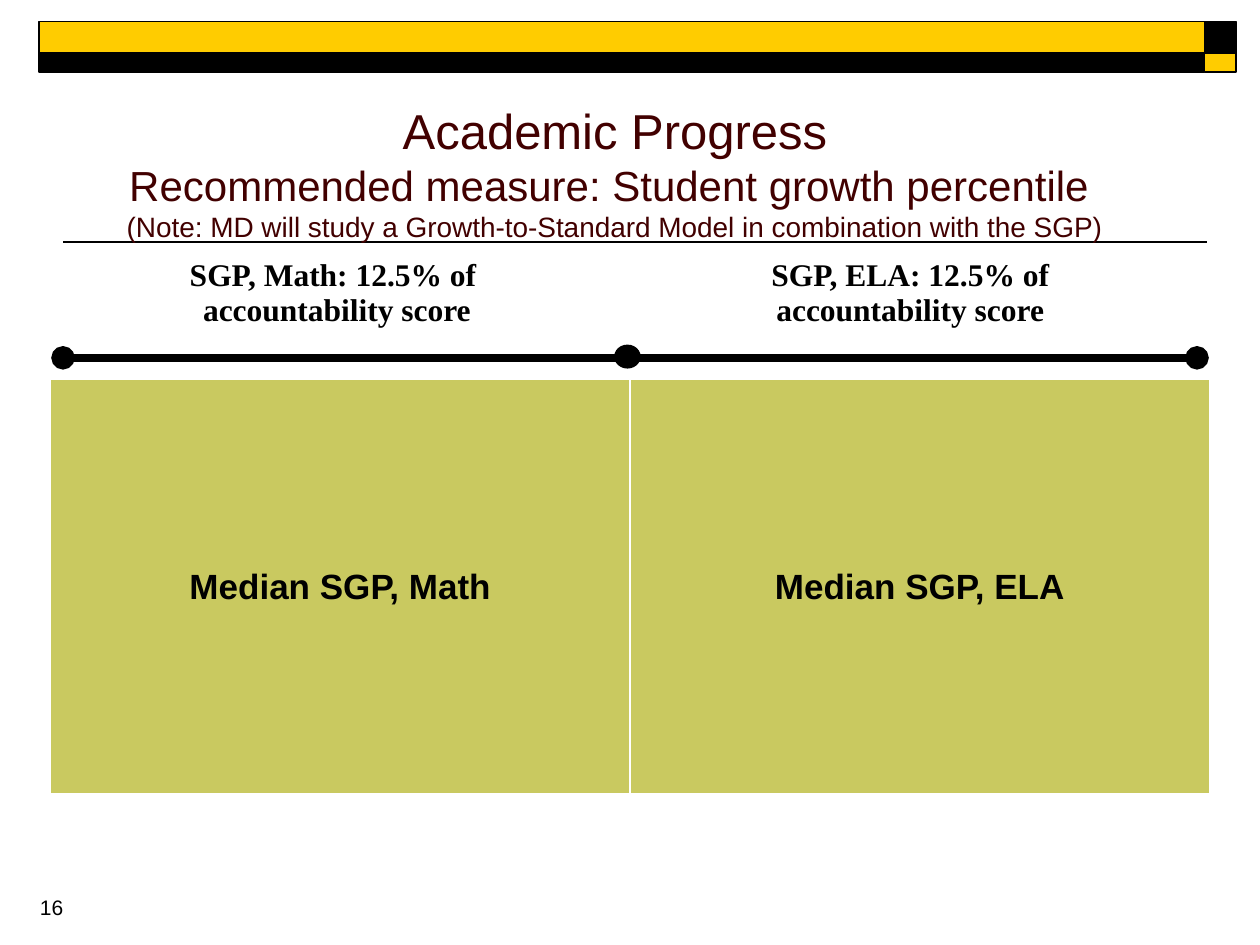
from lxml import etree
from pptx import Presentation
from pptx import util as u
from pptx.dml.color import RGBColor
from pptx.enum import shapes, text
from pptx.oxml import ns

BLACK = RGBColor(0x00, 0x00, 0x00)
GOLD = RGBColor(0xFF, 0xCC, 0x00)
OLIVE = RGBColor(0xC9, 0xC9, 0x60)
MAROON = RGBColor(0x42, 0x00, 0x00)
WHITE = RGBColor(0xFF, 0xFF, 0xFF)


class SlideBuilder:
    font = "Arial"
    borders = {"lnL": 1, "lnR": 1, "lnT": 1, "lnB": 3}

    def __init__(self, s):
        self.s = s

    def box(self, *at):
        return [u.Inches(v) for v in at]

    def style(self, tf, sizes, color, font=None, bold=False):
        runs = [r for p in tf.paragraphs for r in p.runs]
        for p in tf.paragraphs:
            p.alignment = text.PP_ALIGN.CENTER
        for r, size in zip(runs, sizes):
            r.font.name = font or self.font
            r.font.size = u.Pt(size)
            r.font.bold = bold
            r.font.color.rgb = color

    def shape(self, kind, at, fill, width=1):
        sp = self.s.shapes.add_shape(kind, *self.box(*at))
        sp.shadow.inherit = False
        sp.fill.solid()
        sp.fill.fore_color.rgb = fill
        sp.line.color.rgb = BLACK
        sp.line.width = u.Pt(width)

    def line(self, x1, x2, y, width, ends=None):
        c = self.s.shapes.add_connector(
            shapes.MSO_CONNECTOR.STRAIGHT, *self.box(x1, y, x2, y))
        c.line.color.rgb = BLACK
        c.line.width = u.Pt(width)
        spPr = c._element.spPr
        if ends:
            ln = spPr.find(ns.qn("a:ln"))
            for tag in ("a:headEnd", "a:tailEnd"):
                etree.SubElement(ln, ns.qn(tag), type=ends)
        etree.SubElement(spPr, ns.qn("a:effectLst"))

    def text_box(self, at, content, sizes, color, anchor=text.MSO_ANCHOR.TOP):
        tf = self.s.shapes.add_textbox(*self.box(*at)).text_frame
        tf.word_wrap = True
        tf.vertical_anchor = anchor
        tf.text = content
        self.style(tf, sizes, color)

    def border(self, cell):
        tcPr = cell._tc.get_or_add_tcPr()
        for tag, width in self.borders.items():
            ln = etree.SubElement(tcPr, ns.qn("a:" + tag), w=str(u.Pt(width)))
            fill = etree.SubElement(ln, ns.qn("a:solidFill"))
            etree.SubElement(fill, ns.qn("a:srgbClr"), val=str(WHITE))

    def table(self, at, labels, size, font=None, fill=None,
              anchor=text.MSO_ANCHOR.TOP):
        table = self.s.shapes.add_table(1, len(labels), *self.box(*at)).table
        table.first_row = table.horz_banding = False
        for cell, label in zip(table.rows[0].cells, labels):
            self.border(cell)
            if fill is None:
                cell.fill.background()
            else:
                cell.fill.solid()
                cell.fill.fore_color.rgb = fill
            cell.vertical_anchor = anchor
            cell.text_frame.text = label
            self.style(cell.text_frame, [size] * 2, BLACK, font, bold=True)


def main():
    prs = Presentation()
    prs.slide_width, prs.slide_height = u.Inches(10), u.Inches(7.5)
    b = SlideBuilder(prs.slides.add_slide(prs.slide_layouts[6]))
    rect, oval = shapes.MSO_SHAPE.RECTANGLE, shapes.MSO_SHAPE.OVAL

    b.line(0.5, 9.58, 1.92, 1)
    for y, h, bar, corner in ((0.17, 0.25, GOLD, BLACK),
                              (0.42, 0.15, BLACK, GOLD)):
        b.shape(rect, (0.31, y, 9.25, h), bar)
        b.shape(rect, (9.56, y, 0.25, h), corner)

    b.table((0.4, 3.01, 9.2, 3.3), ("Median SGP, Math", "Median SGP, ELA"),
            20, fill=OLIVE, anchor=text.MSO_ANCHOR.MIDDLE)
    b.line(0.5, 9.5, 2.84, 4.5, ends="oval")
    b.shape(oval, (4.88, 2.74, 0.2, 0.18), BLACK, 0.75)
    b.table((0.4, 2, 9.1, 0.7),
            ("SGP, Math: 12.5% of \naccountability score",
             "SGP, ELA: 12.5% of\naccountability score"),
            18, font="Times New Roman")

    b.text_box((-0.12, 1.31, 10, 0.67),
               "Academic Progress\v"
               "Recommended measure: Student growth percentile \n"
               "(Note: MD will study a Growth-to-Standard Model "
               "in combination with the SGP)",
               (28, 24, 16), MAROON, text.MSO_ANCHOR.BOTTOM)
    b.text_box((-0.63, 7.05, 2.08, 0.5), "16", (12,), BLACK)
    prs.save("out.pptx")


if __name__ == "__main__":
    main()
